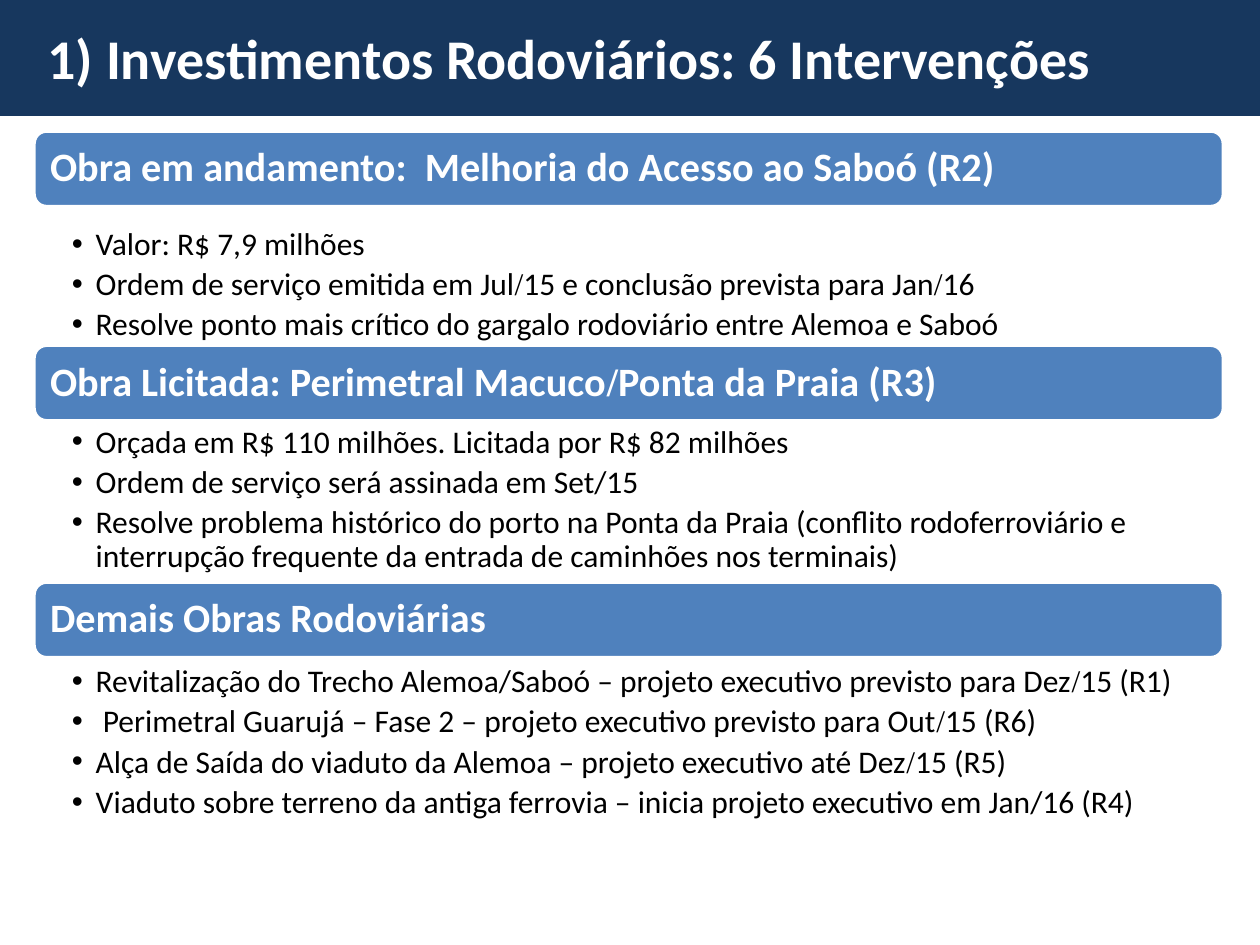
from lxml import etree
from pptx import Presentation
from pptx import util as u
from pptx.dml.color import RGBColor
from pptx.enum import shapes, text
from pptx.oxml.ns import qn

WIDTH, HEIGHT = 10, 7.5
LEFT, BAR_WIDTH, BAR_HEIGHT = 0.27, 9.44, 0.6
SERIF_SLASH = "|"

TITLE = "1) Investimentos Rodoviários: 6 Intervenções"
SECTIONS = [
    {"top": 1.04, "gap": 0.14, "height": 1.02,
     "heading": "Obra em andamento:  Melhoria do Acesso ao Saboó (R2)",
     "items": ["Valor: R$ 7,9 milhões",
               "Ordem de serviço emitida em Jul|15 e conclusão prevista para Jan|16",
               "Resolve ponto mais crítico do gargalo rodoviário entre Alemoa e Saboó"]},
    {"top": 2.74, "gap": 0.01, "height": 1.3,
     "heading": "Obra Licitada: Perimetral Macuco|Ponta da Praia (R3)",
     "items": ["Orçada em R$ 110 milhões. Licitada por R$ 82 milhões",
               "Ordem de serviço será assinada em Set/15",
               "Resolve problema histórico do porto na Ponta da Praia (conflito rodoferroviário e "
               "interrupção frequente da entrada de caminhões nos terminais)"]},
    {"top": 4.62, "gap": 0.03, "height": 1.35,
     "heading": "Demais Obras Rodoviárias",
     "items": ["Revitalização do Trecho Alemoa/Saboó – projeto executivo previsto para Dez|15 (R1)",
               " Perimetral Guarujá – Fase 2 – projeto executivo previsto para Out|15 (R6)",
               "Alça de Saída do viaduto da Alemoa – projeto executivo até Dez|15 (R5)",
               "Viaduto sobre terreno da antiga ferrovia – inicia projeto executivo em Jan/16 (R4)"]},
]
TITLE_FONT = {"size": u.Pt(32), "bold": True, "color": "FFFFFF"}
HEADING_FONT = {"size": u.Pt(23), "bold": True, "color": "FFFFFF"}
ITEM_FONT = {"size": u.Pt(18), "bold": False, "color": "000000"}
ITEM_SPACING = {"level": 1, "line_spacing": 0.9, "space_after": u.Pt(3.6)}


def color(value):
    return RGBColor.from_string(value)


def apply(target, values):
    for name, value in values.items():
        setattr(target, name, value)


def box(left, top, width, height):
    return [u.Inches(length) for length in (left, top, width, height)]


def set_frame(shape, anchor, insets):
    sides = ("margin_left", "margin_top", "margin_right", "margin_bottom")
    apply(shape.text_frame, {"word_wrap": True, "vertical_anchor": anchor,
                             **dict(zip(sides, map(u.Inches, insets)))})
    return shape.text_frame


def add_bar(slide, kind, place, fill):
    shape = slide.shapes.add_shape(kind, *box(*place))
    shape.shadow.inherit = False
    shape.fill.solid()
    shape.fill.fore_color.rgb = color(fill)
    return shape


def write(paragraph, content, style):
    paragraph.alignment = text.PP_ALIGN.LEFT
    for index, part in enumerate(content.split(SERIF_SLASH)):
        pieces = [("/", "Times New Roman")] if index else []
        for words, face in pieces + [(part, "Calibri")]:
            run = paragraph.add_run()
            run.text = words
            apply(run.font, {"name": face, "size": style["size"], "bold": style["bold"]})
            run.font.color.rgb = color(style["color"])


def add_bullet(paragraph):
    properties = paragraph._p.get_or_add_pPr()
    properties.set("marL", str(u.Inches(0.19)))
    properties.set("indent", str(-u.Inches(0.19)))
    etree.SubElement(properties, qn("a:buFont")).set("typeface", "Arial")
    etree.SubElement(properties, qn("a:buChar")).set("char", "•")


def add_section(slide, section):
    bar = add_bar(slide, shapes.MSO_SHAPE.ROUNDED_RECTANGLE,
                  (LEFT, section["top"], BAR_WIDTH, BAR_HEIGHT), "4F81BD")
    bar.line.color.rgb = color("FFFFFF")
    bar.line.width = u.Pt(2)
    heading = set_frame(bar, text.MSO_ANCHOR.MIDDLE, [0.1] * 4).paragraphs[0]
    heading.line_spacing = 0.9
    write(heading, section["heading"], HEADING_FONT)

    top = section["top"] + BAR_HEIGHT + section["gap"]
    body = slide.shapes.add_textbox(*box(LEFT, top, BAR_WIDTH, section["height"]))
    frame = set_frame(body, text.MSO_ANCHOR.TOP, (0.3, 0.03, 0.18, 0.03))
    for index, item in enumerate(section["items"]):
        paragraph = frame.add_paragraph() if index else frame.paragraphs[0]
        add_bullet(paragraph)
        apply(paragraph, ITEM_SPACING)
        write(paragraph, item, ITEM_FONT)


def main():
    presentation = Presentation()
    apply(presentation, {"slide_width": u.Inches(WIDTH), "slide_height": u.Inches(HEIGHT)})
    slide = presentation.slides.add_slide(presentation.slide_layouts[6])
    banner = add_bar(slide, shapes.MSO_SHAPE.RECTANGLE, (0, 0, WIDTH, 0.92), "17375E")
    banner.line.fill.background()
    title = slide.shapes.add_textbox(*box(0.28, 0.14, BAR_WIDTH, 0.64))
    frame = set_frame(title, text.MSO_ANCHOR.TOP, (0.1, 0.05, 0.1, 0.05))
    write(frame.paragraphs[0], TITLE, TITLE_FONT)
    for section in SECTIONS:
        add_section(slide, section)
    presentation.save("out.pptx")


if __name__ == "__main__":
    main()
